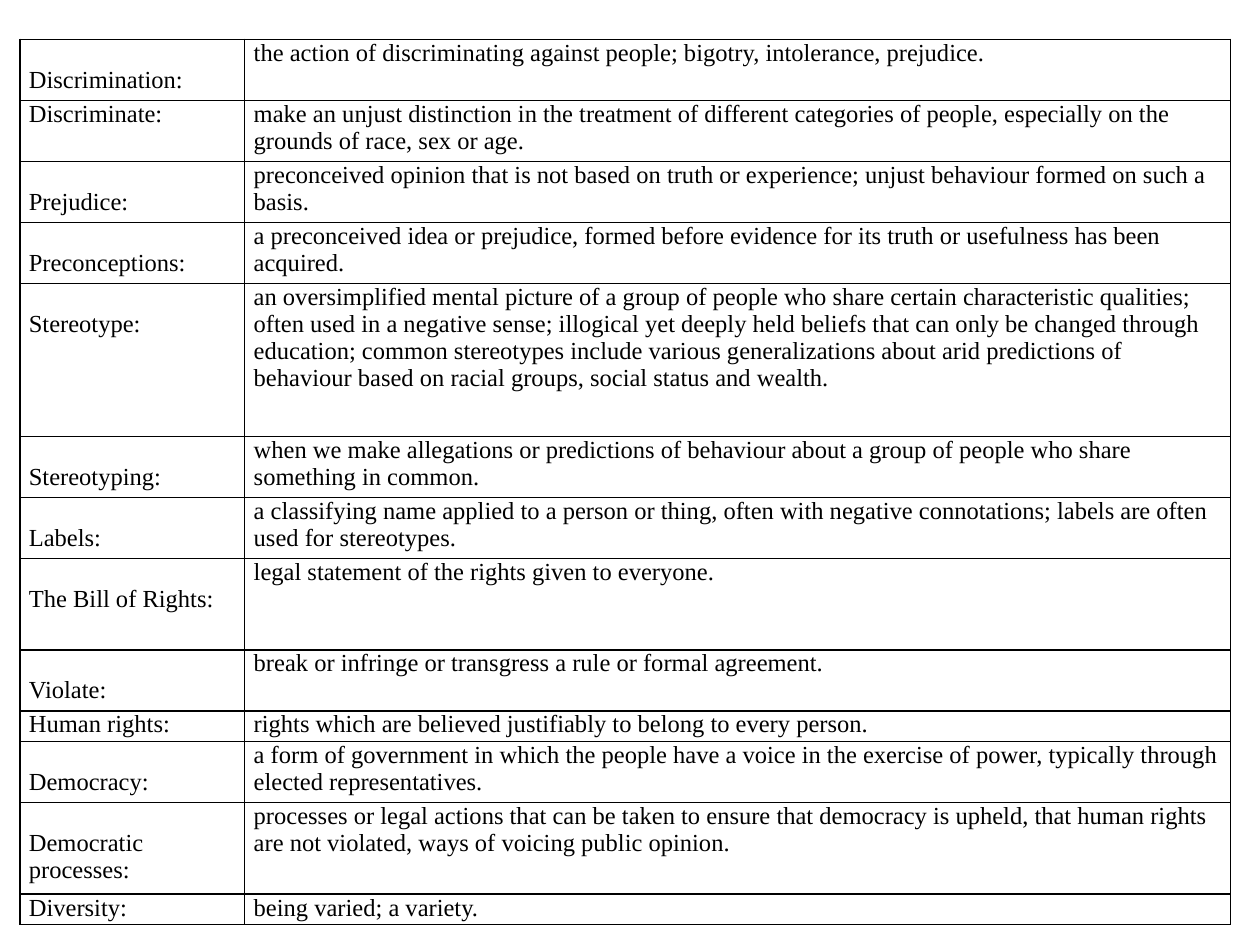
from pptx import Presentation
from pptx.dml.color import RGBColor
from pptx.oxml import parse_xml
from pptx.oxml.ns import nsdecls
from pptx.util import Pt

# Content: term, definition, row height in units, lines the term is lowered
ROWS = [
    ("Discrimination:", "the action of discriminating against people; bigotry, intolerance, prejudice.", 2, 1),
    ("Discriminate:", "make an unjust distinction in the treatment of different categories of people, "
     "especially on the grounds of race, sex or age.", 2, 0),
    ("Prejudice:", "preconceived opinion that is not based on truth or experience; "
     "unjust behaviour formed on such a basis.", 2, 1),
    ("Preconceptions:", "a preconceived idea or prejudice, formed before evidence for its truth "
     "or usefulness has been acquired.", 2, 1),
    ("Stereotype:", "an oversimplified mental picture of a group of people who share certain "
     "characteristic qualities; often used in a negative sense; illogical yet deeply held beliefs "
     "that can only be changed through education; common stereotypes include various generalizations "
     "about arid predictions of behaviour based on racial groups, social status and wealth.", 5, 1),
    ("Stereotyping:", "when we make allegations or predictions of behaviour about a group of people "
     "who share something in common.", 2, 1),
    ("Labels:", "a classifying name applied to a person or thing, often with negative connotations; "
     "labels are often used for stereotypes.", 2, 1),
    ("The Bill of Rights:", "legal statement of the rights given to everyone.", 3, 1),
    ("Violate:", "break or infringe or transgress a rule or formal agreement.", 2, 1),
    ("Human rights:", "rights which are believed justifiably to belong to every person.", 1, 0),
    ("Democracy:", "a form of government in which the people have a voice in the exercise of power, "
     "typically through elected representatives.", 2, 1),
    ("Democratic processes:", "processes or legal actions that can be taken to ensure that democracy "
     "is upheld, that human rights are not violated, ways of voicing public opinion.", 3, 1),
    ("Diversity:", "being varied; a variety.", 1, 0),
]
COLORS = {"ink": "000000"}
FONT, SIZE = "Times New Roman", 14
LEFT, TOP = 11.3, 22.5
COLS = (128.5, 563.3)
UNIT, LINE, INSET = 17.45, 15.5, 5.2


def add_borders(cell):
    tcPr = cell._tc.get_or_add_tcPr()
    for i, side in enumerate(("lnL", "lnR", "lnT", "lnB")):
        tcPr.insert(i, parse_xml(
            f'<a:{side} {nsdecls("a")} w="{Pt(1)}"><a:solidFill>'
            f'<a:srgbClr val="{COLORS["ink"]}"/></a:solidFill></a:{side}>'))


def fill_cell(cell, text, lowered):
    cell.margin_left = cell.margin_right = Pt(INSET)
    cell.margin_top, cell.margin_bottom = Pt(lowered * LINE), Pt(0)
    cell.fill.background()
    add_borders(cell)
    r = cell.text_frame.paragraphs[0].add_run()
    r.text = text
    r.font.name, r.font.size = FONT, Pt(SIZE)
    r.font.color.rgb = RGBColor.from_string(COLORS["ink"])


prs = Presentation()
prs.slide_width, prs.slide_height = Pt(720), Pt(540)
s = prs.slides.add_slide(prs.slide_layouts[6])

# Glossary table
height = UNIT * sum(row[2] for row in ROWS)
table = s.shapes.add_table(len(ROWS), len(COLS), Pt(LEFT), Pt(TOP),
                           Pt(sum(COLS)), Pt(height)).table
table.first_row = table.horz_banding = False
for col, width in zip(table.columns, COLS):
    col.width = Pt(width)
for i, (term, definition, units, lowered) in enumerate(ROWS):
    table.rows[i].height = Pt(units * UNIT)
    fill_cell(table.cell(i, 0), term, lowered)
    fill_cell(table.cell(i, 1), definition, 0)

prs.save("out.pptx")
